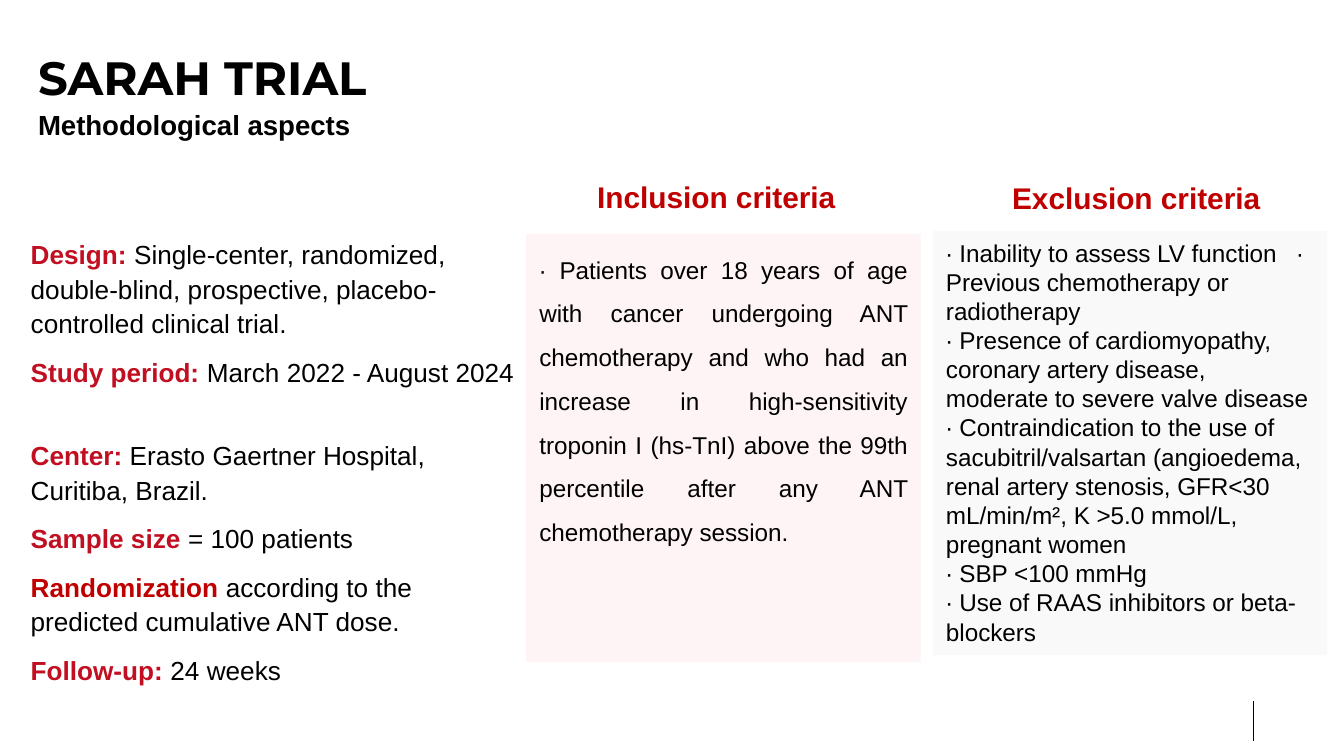
import pptx
import pptx.util
import pptx.dml.color
import pptx.enum.shapes
import pptx.enum.text
import pptx.oxml.ns
import lxml.etree

PX = 4572  # 200 px to the inch
COLORS = {"black": "000000", "crimson": "C10E20", "red": "C00000",
          "rose": "FEF4F5", "gray": "F9F9F9"}
ALIGN = pptx.enum.text.PP_ALIGN

# Content: a paragraph is a list of (text, color, bold) spans
TITLE = [[("SARAH TRIAL", "black", True)]]
SUBTITLE = [[("Methodological aspects", "black", True)]]
FACTS = [
    ("Design: ", "crimson", "Single-center, randomized, double-blind, prospective, "
     "placebo-controlled clinical trial."),
    ("Study period: ", "crimson", "March 2022 - August 2024"),
    ("Center: ", "crimson", "Erasto Gaertner Hospital,\nCuritiba, Brazil."),
    ("Sample size ", "crimson", "= 100 patients"),
    ("Randomization ", "red", "according to the\npredicted cumulative ANT dose."),
    ("Follow-up: ", "crimson", "24 weeks"),
]
INCLUSION = [
    "∙ Patients over 18 years of age with cancer undergoing ANT chemotherapy and who "
    "had an increase in high-sensitivity troponin I (hs-TnI) above the 99th percentile "
    "after any ANT chemotherapy session.",
]
EXCLUSION = [
    "∙ Inability to assess LV function\t∙ Previous chemotherapy or radiotherapy",
    "∙ Presence of cardiomyopathy, coronary artery disease, moderate to severe valve disease",
    "∙ Contraindication to the use of sacubitril/valsartan (angioedema, renal artery "
    "stenosis, GFR<30 mL/min/m², K >5.0 mmol/L, pregnant women",
    "∙ SBP <100 mmHg",
    "∙ Use of RAAS inhibitors or beta-blockers",
]
# heading, its frame and alignment; items, their frame, fill, alignment and line spacing
CRITERIA = [
    ("Inclusion criteria", (869, 256, 456, 74), ALIGN.LEFT,
     INCLUSION, (783, 348, 587, 637), "rose", ALIGN.JUSTIFY, 1.5),
    ("Exclusion criteria", (1407, 258, 568, 74), ALIGN.CENTER,
     EXCLUSION, (1388, 344, 587, 631), "gray", ALIGN.LEFT, 1.0),
]


def rgb(name):
    return pptx.dml.color.RGBColor.from_string(COLORS[name])


def emu(*lengths):
    return [pptx.util.Emu(length * PX) for length in lengths]


def write(box, paragraphs, size, font="Arial", align=ALIGN.LEFT, spacing=1.0, before=0):
    frame = box.text_frame
    frame.word_wrap = True
    frame.vertical_anchor = pptx.enum.text.MSO_ANCHOR.TOP
    for index, spans in enumerate(paragraphs):
        para = frame.add_paragraph() if index else frame.paragraphs[0]
        para.alignment = align
        para.line_spacing = spacing
        para.space_before = pptx.util.Pt(before if index else 0)
        for text, color, bold in spans:
            for number, line in enumerate(text.split("\n")):
                if number:
                    para.add_line_break()
                span = para.add_run()
                span.text = line
                span.font.name = font
                span.font.size = pptx.util.Pt(size)
                span.font.bold = bold
                span.font.color.rgb = rgb(color)


def add_text(page, frame, paragraphs, size, **style):
    box = page.shapes.add_textbox(*emu(*frame))
    write(box, paragraphs, size, **style)
    return box


def add_panel(page, frame, fill):
    panel = page.shapes.add_shape(pptx.enum.shapes.MSO_SHAPE.RECTANGLE, *emu(*frame))
    panel.shadow.inherit = False
    panel.fill.solid()
    panel.fill.fore_color.rgb = rgb(fill)
    panel.line.fill.background()
    return panel


def set_tab(para, position):
    qn = pptx.oxml.ns.qn
    stops = lxml.etree.SubElement(para._p.get_or_add_pPr(), qn("a:tabLst"))
    lxml.etree.SubElement(stops, qn("a:tab"), pos=str(position * PX), algn="l")


def main():
    deck = pptx.Presentation()
    deck.slide_width, deck.slide_height = emu(2000, 1125)
    page = deck.slides.add_slide(deck.slide_layouts[6])

    # Footer rule
    rule = page.shapes.add_connector(pptx.enum.shapes.MSO_CONNECTOR.STRAIGHT,
                                     *emu(1865, 1043, 1865, 1103))
    rule.line.color.rgb = rgb("black")
    rule.line.width = pptx.util.Pt(0.5)
    lxml.etree.SubElement(rule._element.spPr, pptx.oxml.ns.qn("a:effectLst"))

    # Title and subtitle
    add_text(page, (37, 63, 1808, 236), TITLE, 25, font="Montserrat")
    add_text(page, (37, 151, 1492, 70), SUBTITLE, 14.8)

    # Trial facts, with a wider gap below the study period
    facts = [[(label, color, True), (text, "black", False)] for label, color, text in FACTS]
    box = add_text(page, (26, 341, 782, 766), facts, 14, spacing=1.1, before=7.5)
    box.text_frame.paragraphs[1].space_after = pptx.util.Pt(18.5)

    # Criteria panels with their headings
    for heading, place, heading_align, items, frame, fill, align, spacing in CRITERIA:
        panel = add_panel(page, frame, fill)
        write(panel, [[(item, "black", False)] for item in items], 13,
              align=align, spacing=spacing)
        for para, item in zip(panel.text_frame.paragraphs, items):
            if "\t" in item:
                set_tab(para, 522)
        add_text(page, place, [[(heading, "red", True)]], 16, align=heading_align)

    deck.save("out.pptx")


if __name__ == "__main__":
    main()
